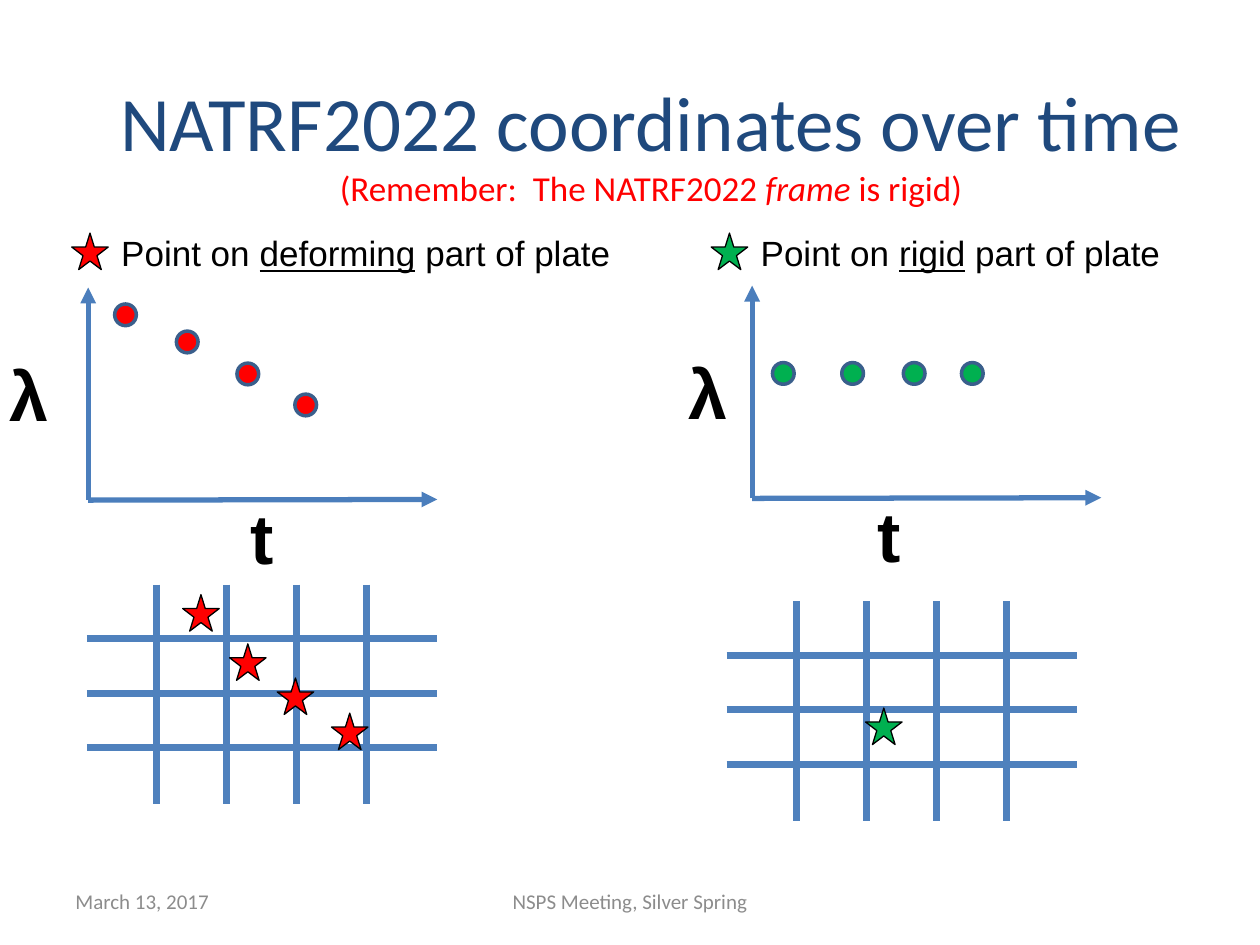
from pptx import Presentation
from pptx.dml.color import RGBColor
from pptx.enum.shapes import MSO_CONNECTOR, MSO_SHAPE
from pptx.enum.text import MSO_ANCHOR, MSO_AUTO_SIZE, PP_ALIGN
from pptx.oxml.ns import qn
from pptx.util import Pt
from lxml.etree import SubElement

RED, GREEN = "FF0000", "00B050"
GRID_BLUE, AXIS_BLUE, DOT_EDGE = "4F81BD", "4B7EBC", "3A5F8C"
STAR, DOT = 20.9, 12.4


def rgb(value):
    """Return the colour for a hex string."""
    return RGBColor.from_string(value)


def style(p, size, name, color, bold=False, align=PP_ALIGN.LEFT):
    """Set the font and alignment shared by all runs of a paragraph."""
    p.alignment = align
    p.font.size, p.font.name, p.font.bold = Pt(size), name, bold
    p.font.color.rgb = rgb(color)


def add_line(s, x1, y1, x2, y2, color, width, arrow=False):
    """Draw a straight line, with an arrowhead at its end if asked."""
    c = s.shapes.add_connector(MSO_CONNECTOR.STRAIGHT, Pt(x1), Pt(y1), Pt(x2), Pt(y2))
    c.line.color.rgb = rgb(color)
    c.line.width = Pt(width)
    if arrow:
        SubElement(c.line._get_or_add_ln(), qn("a:tailEnd"), type="triangle")
    SubElement(c._element.spPr, qn("a:effectLst"))


def add_marker(s, kind, x, y, size, fill, edge, width):
    """Draw a filled marker in a square box."""
    sp = s.shapes.add_shape(kind, Pt(x), Pt(y), Pt(size), Pt(size))
    sp.shadow.inherit = False
    sp.fill.solid()
    sp.fill.fore_color.rgb = rgb(fill)
    sp.line.color.rgb = rgb(edge)
    sp.line.width = Pt(width)


def add_star(s, x, y, fill):
    """Draw a black-edged star."""
    add_marker(s, MSO_SHAPE.STAR_5_POINT, x, y, STAR, fill, "000000", 0.75)


def add_text(s, x, y, w, h, parts, wrap=False, anchor=MSO_ANCHOR.TOP, **font):
    """Add a one-paragraph text box; odd parts are underlined."""
    tf = s.shapes.add_textbox(Pt(x), Pt(y), Pt(w), Pt(h)).text_frame
    tf.word_wrap = wrap
    tf.vertical_anchor = anchor
    p = tf.paragraphs[0]
    for i, part in enumerate(parts):
        r = p.add_run()
        r.text = part
        if i % 2:
            r.font.underline = True
    style(p, **font)


def add_title(s):
    """Fill and place the title with its red second line."""
    sp = s.shapes.title
    sp.left, sp.top, sp.width, sp.height = Pt(48), Pt(36), Pt(648), Pt(90)
    tf = sp.text_frame
    tf.auto_size = MSO_AUTO_SIZE.NONE
    tf.vertical_anchor = MSO_ANCHOR.MIDDLE
    p = tf.paragraphs[0]
    style(p, 44, "Calibri", "1F497D", align=PP_ALIGN.CENTER)
    p.add_run().text = "NATRF2022 coordinates over time"
    p.add_line_break()
    for text, italic in (("(Remember:  The NATRF2022 ", False), ("frame", True), (" is rigid)", False)):
        r = p.add_run()
        r.text = text
        r.font.size, r.font.italic = Pt(20), italic
        r.font.color.rgb = rgb(RED)


def add_heading(s, x, word, width, color):
    """Add a star with the description of its point."""
    add_star(s, x, 133.2, color)
    add_text(s, x + 21.2, 128.9, width, 31.5, ["Point on ", word, " part of plate"],
             size=20, name="Arial", color="000000")


def add_plot(s, x, y, lambda_x, t_x, dots, color):
    """Draw longitude against time, with the origin at x, y."""
    add_line(s, x, y, x, y - 121.5, AXIS_BLUE, 3, arrow=True)
    add_line(s, x, y, x + 199.5, y - 0.4, AXIS_BLUE, 3, arrow=True)
    for text, left, top, width in (("λ", lambda_x, y - 88.5, 36.7), ("t", t_x, y - 6.8, 28)):
        add_text(s, left, top, width, 55.7, [text],
                 size=40, name="Arial", color="000000", bold=True)
    for dot_x, dot_y in dots:
        add_marker(s, MSO_SHAPE.OVAL, dot_x, dot_y, DOT, color, DOT_EDGE, 2)


def add_grid(s, x, y, stars, color):
    """Draw the map grid and the positions of the point on it."""
    for i in range(1, 5):
        add_line(s, x + 40 * i, y, x + 40 * i, y + 125.3, GRID_BLUE, 4)
    for i in range(1, 4):
        add_line(s, x, y + 31 * i, x + 200, y + 31 * i, GRID_BLUE, 4)
    for star_x, star_y in stars:
        add_star(s, star_x, star_y, color)


def add_footer(s, x, w, text, align):
    """Add a grey footer text."""
    add_text(s, x, 500.4, w, 28.8, [text], wrap=True, anchor=MSO_ANCHOR.MIDDLE,
             size=12, name="Calibri", color="8C8C8C", align=align)


def main():
    """Build and save the slide."""
    prs = Presentation()
    prs.slide_width, prs.slide_height = Pt(720), Pt(540)
    s = prs.slides.add_slide(prs.slide_layouts[5])
    add_title(s)

    add_heading(s, 41, "deforming", 296, RED)
    add_plot(s, 50.4, 285.8, -1.4, 136.1,
             [(65.5, 173.7), (100.8, 189.2), (135.4, 207.5), (168.5, 225.2)], RED)
    add_grid(s, 49.7, 334.1,
             [(104.4, 339.8), (131.2, 367.9), (158.4, 387.4), (189.4, 407.5)], RED)

    add_heading(s, 406.4, "rigid", 244, GREEN)
    add_plot(s, 429.8, 284.8, 386.6, 494.6,
             [(x, 207.2) for x in (441.4, 481, 516.2, 549.4)], GREEN)
    add_grid(s, 415.2, 343.6, [(494.6, 404.6)], GREEN)

    add_footer(s, 36, 168, "March 13, 2017", PP_ALIGN.LEFT)
    add_footer(s, 246, 228, "NSPS Meeting, Silver Spring", PP_ALIGN.CENTER)
    prs.save("out.pptx")


if __name__ == "__main__":
    main()
